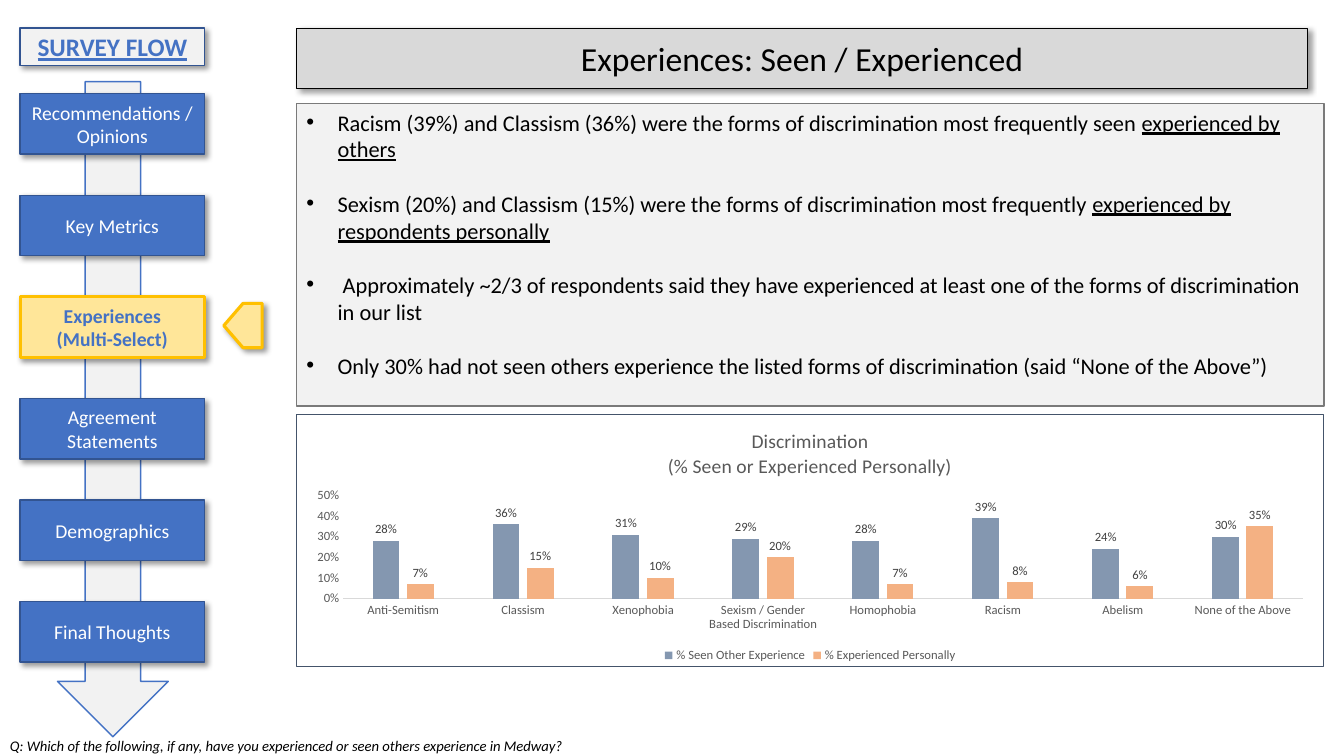
from lxml import etree
from pptx import Presentation
from pptx import util as u
from pptx.chart.data import CategoryChartData
from pptx.dml.color import RGBColor
from pptx.enum import chart as charts, shapes, text
from pptx.oxml import parse_xml
from pptx.oxml.ns import nsdecls, qn

BLACK = RGBColor(0x00, 0x00, 0x00)
WHITE = RGBColor(0xFF, 0xFF, 0xFF)
PALE = RGBColor(0xF2, 0xF2, 0xF2)
SILVER = RGBColor(0xD9, 0xD9, 0xD9)
EDGE_GRAY = RGBColor(0x7A, 0x7A, 0x7A)
AXIS_GRAY = RGBColor(0x59, 0x59, 0x59)
LABEL_GRAY = RGBColor(0x40, 0x40, 0x40)
BLUE = RGBColor(0x44, 0x72, 0xC4)
DARK_BLUE = RGBColor(0x32, 0x54, 0x91)
SAND = RGBColor(0xFF, 0xE6, 0x99)
GOLD = RGBColor(0xFF, 0xC0, 0x00)
SLATE = RGBColor(0x84, 0x97, 0xB0)
PEACH = RGBColor(0xF4, 0xB1, 0x83)
FONT = "Calibri"

TITLE = "Experiences: Seen / Experienced"
FLOW_HEADING = "SURVEY FLOW"
STEPS = [
    ["Recommendations / Opinions"],
    ["Key Metrics"],
    ["Experiences", "(Multi-Select)"],
    ["Agreement Statements"],
    ["Demographics"],
    ["Final Thoughts"],
]
CURRENT_STEP = 2
# Each finding is plain text followed by underlined text.
FINDINGS = [
    ("Racism (39%) and Classism (36%) were the forms of discrimination most frequently seen ",
     "experienced by others"),
    ("Sexism (20%) and Classism (15%) were the forms of discrimination most frequently ",
     "experienced by respondents personally"),
    (" Approximately ~2/3 of respondents said they have experienced at least one of "
     "the forms of discrimination in our list", ""),
    ("Only 30% had not seen others experience the listed forms of discrimination "
     "(said “None of the Above”)", ""),
]
QUESTION = ("Q: Which of the following, if any, have you experienced or seen others "
            "experience in Medway?")
CHART_TITLE = ["Discrimination", "(% Seen or Experienced Personally)"]
CATEGORIES = ["Anti-Semitism", "Classism", "Xenophobia", "Sexism / Gender Based Discrimination",
              "Homophobia", "Racism", "Abelism", "None of the Above"]
SERIES = [
    ("% Seen Other Experience", SLATE, [0.28, 0.36, 0.31, 0.29, 0.28, 0.39, 0.24, 0.30]),
    ("% Experienced Personally", PEACH, [0.07, 0.15, 0.10, 0.20, 0.07, 0.08, 0.06, 0.35]),
]
PLOT_LAYOUT = {"x": 0.045, "y": 0.32, "w": 0.935, "h": 0.41}

FLOW_LEFT, FLOW_WIDTH = 0.2, 1.83
STEP_TOP, LAST_STEP_TOP, STEP_HEIGHT = 0.93, 5.97, 0.6
MAIN_LEFT, MAIN_WIDTH = 2.94, 10.19


def set_font(font, size, color, bold=False, italic=False, underline=False):
    font.name, font.size = FONT, u.Pt(size)
    font.bold, font.italic, font.underline = bold, italic, underline
    font.color.rgb = color


def write(frame, lines, size, color, align=text.PP_ALIGN.CENTER, **style):
    """Write one paragraph per line; a tuple holds plain then underlined text."""
    for index, line in enumerate(lines):
        para = frame.paragraphs[0] if index == 0 else frame.add_paragraph()
        para.alignment, para.line_spacing = align, 1.0
        parts = line if isinstance(line, tuple) else (line,)
        for position, part in enumerate(parts):
            if part:
                span = para.add_run()
                span.text = part
                set_font(span.font, size, color, **style)
                if position == 1:
                    span.font.underline = True


def paint(shape, fill, line, weight=1, shadow=False):
    shape.fill.solid()
    shape.fill.fore_color.rgb = fill
    shape.line.color.rgb = line
    shape.line.width = u.Pt(weight)
    shape.shadow.inherit = False
    if shadow:
        shape._element.spPr.find(qn("a:effectLst")).append(parse_xml(
            f'<a:outerShdw {nsdecls("a")} blurRad="50800" dist="38100" dir="2700000" '
            'algn="tl" rotWithShape="0"><a:prstClr val="black">'
            '<a:alpha val="40000"/></a:prstClr></a:outerShdw>'))


def place(kind, left, top, width, height, fill, line, **look):
    shape = slide.shapes.add_shape(kind, *map(u.Inches, (left, top, width, height)))
    paint(shape, fill, line, **look)
    return shape


def add_flow():
    kinds = shapes.MSO_SHAPE
    place(kinds.DOWN_ARROW, 0.57, 0.81, 1.1, 6.5, PALE, BLUE)
    heading = place(kinds.RECTANGLE, FLOW_LEFT, 0.28, FLOW_WIDTH, 0.37, PALE, DARK_BLUE,
                    shadow=True)
    write(heading.text_frame, [FLOW_HEADING], 18, BLUE, bold=True, underline=True)
    pitch = (LAST_STEP_TOP - STEP_TOP) / (len(STEPS) - 1)
    for index, lines in enumerate(STEPS):
        current = index == CURRENT_STEP
        fill, line, weight, color = (SAND, GOLD, 2.25, BLUE) if current else (
            BLUE, DARK_BLUE, 1, WHITE)
        step = place(kinds.RECTANGLE, FLOW_LEFT, STEP_TOP + index * pitch, FLOW_WIDTH,
                     STEP_HEIGHT, fill, line, weight=weight, shadow=True)
        write(step.text_frame, lines, 14, color, bold=current)
    pointer = place(kinds.PENTAGON, 2.22, 3.01, 0.38, 0.44, SAND, GOLD, weight=2.25, shadow=True)
    pointer.rotation = 180


def add_findings():
    box = place(shapes.MSO_SHAPE.ROUNDED_RECTANGLE, MAIN_LEFT, 1.03, MAIN_WIDTH, 3, PALE, EDGE_GRAY)
    box.adjustments[0] = 0
    frame = box.text_frame
    frame.vertical_anchor = text.MSO_ANCHOR.TOP
    write(frame, FINDINGS, 16, BLACK, align=text.PP_ALIGN.LEFT)
    for index, para in enumerate(frame.paragraphs):
        if index:
            para.space_before = u.Pt(19.5)
        props = para._p.get_or_add_pPr()
        props.set("marL", str(u.Inches(0.31)))
        props.set("indent", str(u.Inches(-0.31)))
        etree.SubElement(props, qn("a:buFont")).set("typeface", "Arial")
        etree.SubElement(props, qn("a:buChar")).set("char", "•")


def add_results_chart():
    data = CategoryChartData(number_format="0%")
    data.categories = CATEGORIES
    for name, _, values in SERIES:
        data.add_series(name, values)
    chart = slide.shapes.add_chart(
        charts.XL_CHART_TYPE.COLUMN_CLUSTERED,
        *map(u.Inches, (MAIN_LEFT, 4.11, MAIN_WIDTH, 2.51)), data).chart
    set_font(chart.font, 10, BLACK)
    chart.has_title = True
    write(chart.chart_title.text_frame, CHART_TITLE, 14, AXIS_GRAY)
    chart.has_legend = True
    chart.legend.position = charts.XL_LEGEND_POSITION.BOTTOM
    chart.legend.include_in_layout = False
    set_font(chart.legend.font, 9, AXIS_GRAY)

    for axis in (chart.category_axis, chart.value_axis):
        axis.has_major_gridlines = False
        axis.major_tick_mark = axis.minor_tick_mark = charts.XL_TICK_MARK.NONE
        set_font(axis.tick_labels.font, 9, AXIS_GRAY)
    chart.category_axis.format.line.color.rgb = SILVER
    chart.category_axis.format.line.width = u.Pt(0.75)
    values = chart.value_axis
    values.format.line.fill.background()
    values.minimum_scale, values.maximum_scale, values.major_unit = 0, 0.5, 0.1
    values.tick_labels.number_format = "0%"
    values.tick_labels.number_format_is_linked = False

    plot = chart.plots[0]
    plot.gap_width, plot.overlap, plot.vary_by_categories = 219, -27, False
    for series, (_, color, _) in zip(plot.series, SERIES):
        series.format.fill.solid()
        series.format.fill.fore_color.rgb = color
        labels = series.data_labels
        labels.show_value = True
        labels.number_format, labels.number_format_is_linked = "0%", False
        labels.position = charts.XL_LABEL_POSITION.OUTSIDE_END
        set_font(labels.font, 9, LABEL_GRAY)

    area = chart._chartSpace.chart.plotArea
    for old in area.findall(qn("c:layout")):
        area.remove(old)
    sizes = "".join(f'<c:{key} val="{value}"/>' for key, value in PLOT_LAYOUT.items())
    area.insert(0, parse_xml(
        f'<c:layout {nsdecls("c")}><c:manualLayout><c:layoutTarget val="inner"/>'
        f'<c:xMode val="edge"/><c:yMode val="edge"/>{sizes}</c:manualLayout></c:layout>'))
    chart._chartSpace.chart.addnext(parse_xml(
        f'<c:spPr {nsdecls("c", "a")}><a:noFill/><a:ln w="9525"><a:solidFill>'
        '<a:srgbClr val="44546A"/></a:solidFill></a:ln></c:spPr>'))


def add_title():
    title = slide.shapes.title
    title.left, title.top, title.width, title.height = map(
        u.Inches, (MAIN_LEFT, 0.28, 10.03, 0.6))
    paint(title, SILVER, BLACK, shadow=True)
    title.text_frame.auto_size = text.MSO_AUTO_SIZE.NONE
    title.text_frame.vertical_anchor = text.MSO_ANCHOR.MIDDLE
    write(title.text_frame, [TITLE], 24, BLACK)


def add_question():
    box = slide.shapes.add_textbox(*map(u.Inches, (0, 7.26, 5.79, 0.28)))
    box.text_frame.word_wrap = False
    write(box.text_frame, [QUESTION], 10.5, BLACK, align=text.PP_ALIGN.LEFT, italic=True)


deck = Presentation()
deck.slide_width, deck.slide_height = u.Inches(13.33), u.Inches(7.5)
slide = deck.slides.add_slide(deck.slide_layouts[5])
add_title()
add_flow()
add_question()
add_findings()
add_results_chart()
deck.save("out.pptx")
